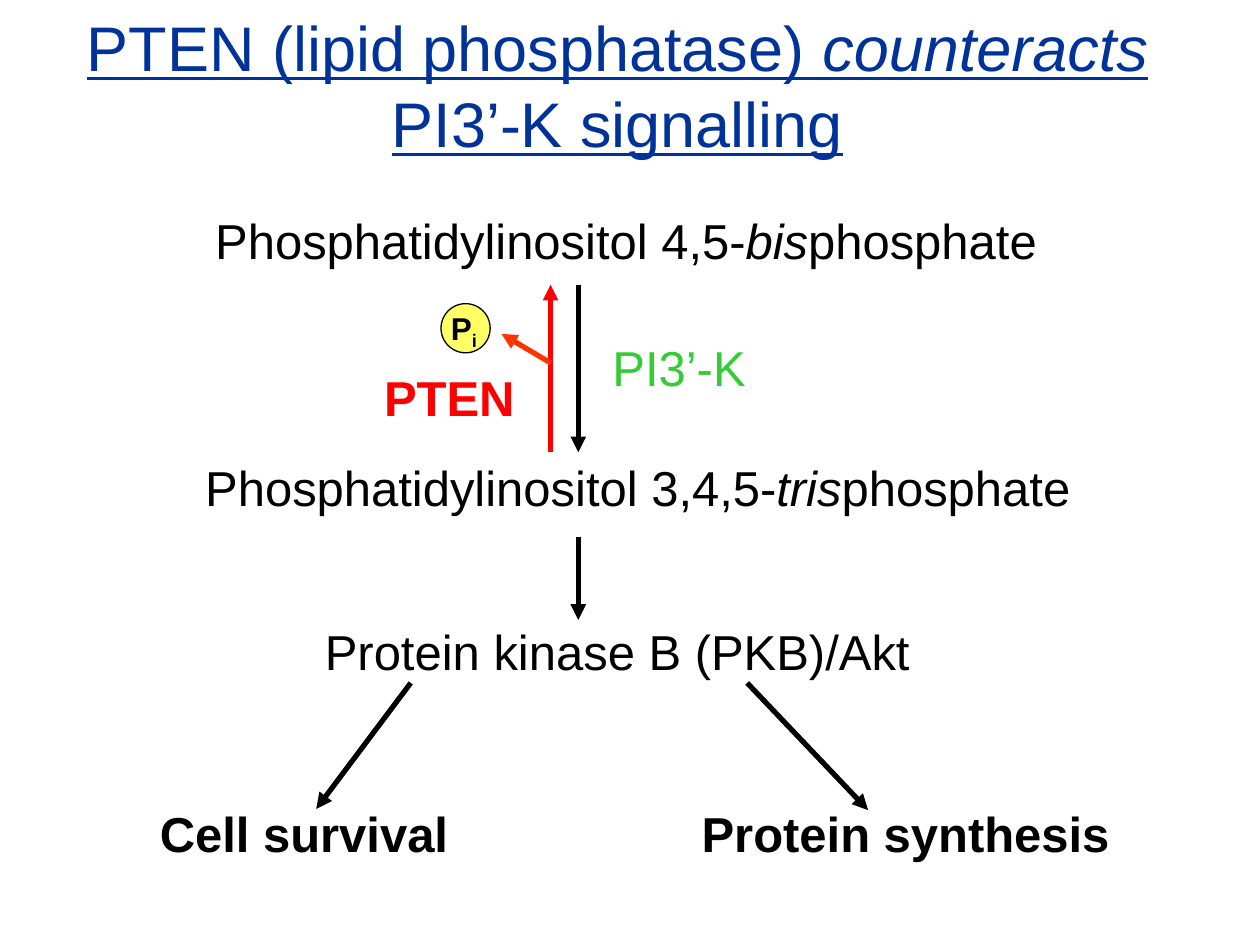
from dataclasses import dataclass
from pptx import Presentation
from pptx.dml.color import RGBColor
from pptx.enum.shapes import MSO_CONNECTOR as Link, MSO_SHAPE as Shape
from pptx.enum.text import MSO_ANCHOR as Anchor, MSO_AUTO_SIZE as Fit, PP_ALIGN as Align
from pptx.oxml.ns import qn
from pptx.util import Inches, Pt
from lxml.etree import SubElement

BLACK = RGBColor(0x00, 0x00, 0x00)
NAVY = RGBColor(0x00, 0x33, 0x99)
GREEN = RGBColor(0x33, 0xCC, 0x33)
RED = RGBColor(0xFF, 0x00, 0x00)
ORANGE = RGBColor(0xFF, 0x33, 0x00)
YELLOW = RGBColor(0xFF, 0xFF, 0x66)

WIDE, HIGH = Inches(10), Inches(7.5)
ROW = 7.6
TOP, BASE = 30.13, 47.87
FORK = 72.27
MID, BACK = 45.9, 43.7


@dataclass(frozen=True)
class Run:
    text: str
    slant: bool = False
    sub: bool = False


@dataclass(frozen=True)
class Label:
    left: float
    top: float
    width: float
    runs: tuple[Run, ...]
    height: float = ROW
    size: int = 28
    color: RGBColor = BLACK
    bold: bool = False
    under: bool = False
    wrap: bool = False
    align: Align = Align.LEFT
    anchor: Anchor = Anchor.TOP


@dataclass(frozen=True)
class Arrow:
    start: tuple[float, float]
    end: tuple[float, float]
    color: RGBColor = BLACK


LABELS = (
    Label(3.9, -0.67, 90.2,
          (Run("PTEN (lipid phosphatase) "), Run("counteracts ", slant=True),
           Run("PI3’-K signalling")),
          height=19.2, size=36, color=NAVY, under=True, wrap=True,
          align=Align.CENTER, anchor=Anchor.MIDDLE),
    Label(16.1, 21.6, 67.4,
          (Run("Phosphatidylinositol 4,5-"), Run("bis", slant=True), Run("phosphate"))),
    Label(15.3, 47.73, 70.9,
          (Run("Phosphatidylinositol 3,4,5-"), Run("tris", slant=True), Run("phosphate"))),
    Label(24.8, 65.07, 48.5, (Run("Protein kinase B (PKB)/Akt"),)),
    Label(47.6, 35.07, 12.6, (Run("PI3’-K"),), color=GREEN, align=Align.CENTER),
    Label(11.7, 84.4, 24.9, (Run("Cell survival"),), bold=True),
    Label(54.7, 84.4, 34.5, (Run("Protein synthesis"),), bold=True),
    Label(29.5, 38.27, 12.4, (Run("PTEN"),), color=RED, bold=True),
    Label(34.8, 32, 4.1, (Run("P"), Run("i", sub=True)), height=5.33, size=18, bold=True),
)

ARROWS = (
    Arrow((MID, TOP), (MID, BASE)),
    Arrow((MID, 56.8), (MID, 65.6)),
    Arrow((32.6, FORK), (25.1, 85.6)),
    Arrow((59.3, FORK), (68.9, 85.73)),
    Arrow((BACK, BASE), (BACK, TOP), RED),
    Arrow((BACK, 38.4), (39.8, 35.33), ORANGE),
)


def across(share: float) -> int:
    return round(WIDE * share / 100)


def down(share: float) -> int:
    return round(HIGH * share / 100)


def draw_arrow(shapes, arrow: Arrow) -> None:
    (x1, y1), (x2, y2) = arrow.start, arrow.end
    link = shapes.add_connector(Link.STRAIGHT, across(x1), down(y1), across(x2), down(y2))
    link.line.color.rgb = arrow.color
    link.line.width = Pt(3)
    SubElement(link.line._get_or_add_ln(), qn("a:tailEnd"), type="triangle")
    SubElement(link._element.spPr, qn("a:effectLst"))


def draw_label(shapes, label: Label) -> None:
    box = shapes.add_textbox(across(label.left), down(label.top),
                             across(label.width), down(label.height))
    frame = box.text_frame
    frame.word_wrap = label.wrap
    frame.auto_size = Fit.NONE if label.wrap else Fit.SHAPE_TO_FIT_TEXT
    frame.vertical_anchor = label.anchor
    para = frame.paragraphs[0]
    para.alignment = label.align
    font = para.font
    font.name, font.size, font.bold = "Arial", Pt(label.size), label.bold
    font.underline = label.under
    font.color.rgb = label.color
    for part in label.runs:
        run = para.add_run()
        run.text = part.text
        if part.slant:
            run.font.italic = True
        if part.sub:
            run._r.get_or_add_rPr().set("baseline", "-25000")


def draw_disc(shapes) -> None:
    disc = shapes.add_shape(Shape.OVAL, across(35), down(32.13), across(3.9), down(5.2))
    disc.shadow.inherit = False
    disc.fill.solid()
    disc.fill.fore_color.rgb = YELLOW
    disc.line.color.rgb = BLACK
    disc.line.width = Pt(0.75)


def main() -> None:
    deck = Presentation()
    deck.slide_width, deck.slide_height = WIDE, HIGH
    shapes = deck.slides.add_slide(deck.slide_layouts[6]).shapes
    for arrow in ARROWS:
        draw_arrow(shapes, arrow)
    draw_disc(shapes)
    for label in LABELS:
        draw_label(shapes, label)
    deck.save("out.pptx")


if __name__ == "__main__":
    main()
